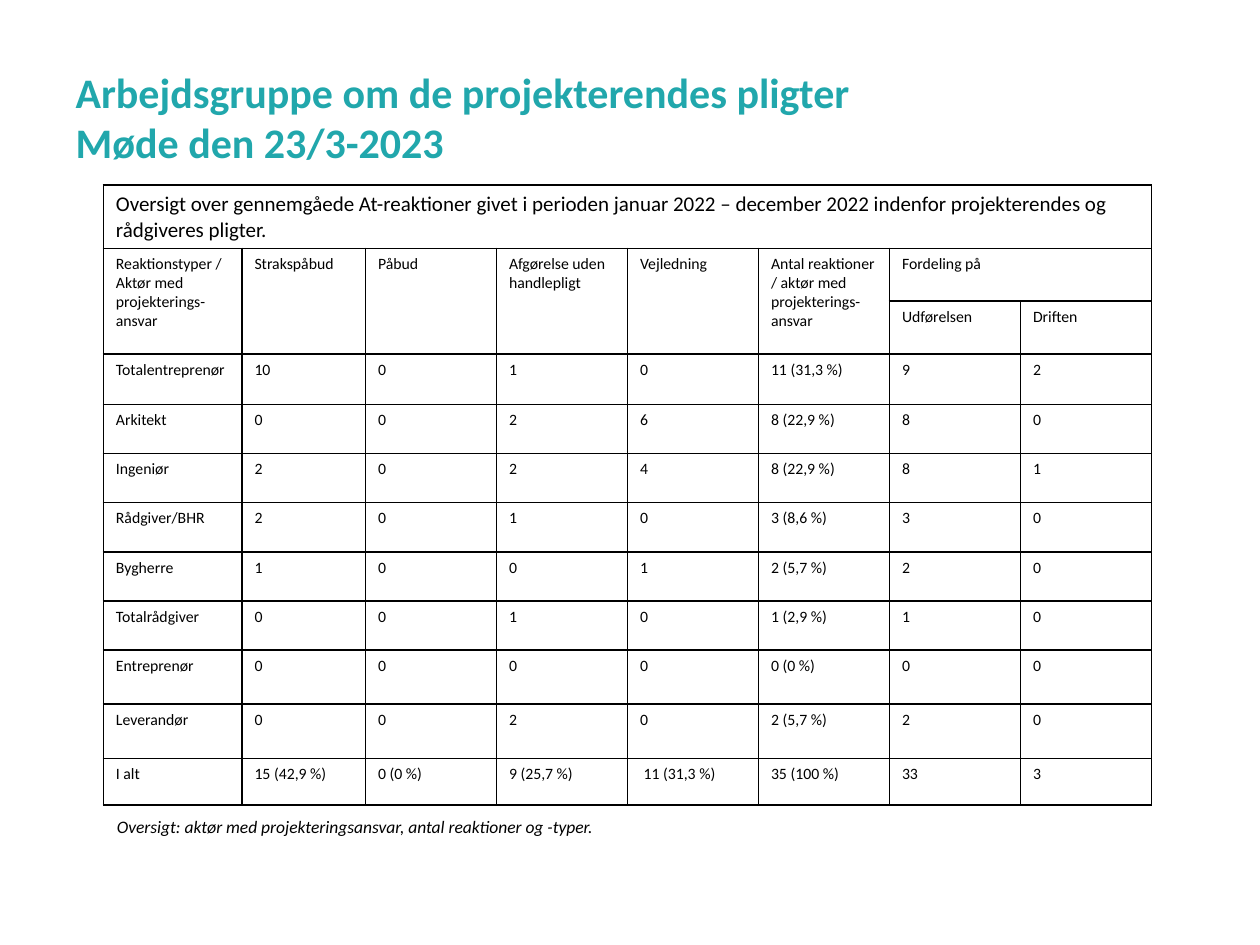
from lxml import etree
from pptx import Presentation
from pptx.dml.color import RGBColor
from pptx.enum.text import MSO_ANCHOR, MSO_AUTO_SIZE, PP_ALIGN
from pptx.oxml.ns import qn
from pptx.util import Inches, Pt

LEFT = PP_ALIGN.LEFT
TOP, MIDDLE = MSO_ANCHOR.TOP, MSO_ANCHOR.MIDDLE
GROW = MSO_AUTO_SIZE.SHAPE_TO_FIT_TEXT
FONT = "Calibri"
COLORS = {"title": "21A7AC", "text": "000000", "line": "000000"}
WIDTH, HEIGHT = 10, 7.5
TITLE_ONLY = 5

# Table content
HEADING = ("Oversigt over gennemgåede At-reaktioner givet i perioden januar 2022 – "
           "december 2022 indenfor projekterendes og rådgiveres pligter.")
HEADS = ["Reaktionstyper /\nAktør med projekterings-ansvar", "Strakspåbud", "Påbud",
         "Afgørelse uden handlepligt", "Vejledning",
         "Antal reaktioner / aktør med projekterings-ansvar", "Fordeling på"]
SPLIT = ["Udførelsen", "Driften"]
ACTORS = [
    ["Totalentreprenør", "10", "0", "1", "0", "11 (31,3 %)", "9", "2"],
    ["Arkitekt", "0", "0", "2", "6", "8 (22,9 %)", "8", "0"],
    ["Ingeniør", "2", "0", "2", "4", "8 (22,9 %)", "8", "1"],
    ["Rådgiver/BHR", "2", "0", "1", "0", "3 (8,6 %)", "3", "0"],
    ["Bygherre", "1", "0", "0", "1", "2 (5,7 %)", "2", "0"],
    ["Totalrådgiver", "0", "0", "1", "0", "1 (2,9 %)", "1", "0"],
    ["Entreprenør", "0", "0", "0", "0", "0 (0 %)", "0", "0"],
    ["Leverandør", "0", "0", "2", "0", "2 (5,7 %)", "2", "0"],
    ["I alt", "15 (42,9 %)", "0 (0 %)", "9 (25,7 %)", " 11 (31,3 %)",
     "35 (100 %)", "33", "3"],
]
COLS = [1.1, 0.98] + [1.04] * 6
ROWS = [0.5] + [0.42] * 2 + [0.4] + [0.39] * 5 + [0.43] * 2 + [0.37]
# Merged areas: first row, first column, last row, last column
MERGES = [(0, 0, 0, 7), (1, 6, 1, 7)] + [(1, c, 2, c) for c in range(6)]


class Page:
    """Style and current slide; places are shares of the slide's size."""

    def __init__(self, deck):
        self.slide = deck.slides.add_slide(deck.slide_layouts[TITLE_ONLY])

    def box(self, x, y, w, h):
        return (Inches(x * WIDTH), Inches(y * HEIGHT),
                Inches(w * WIDTH), Inches(h * HEIGHT))

    def run(self, para, text, size, color="text", bold=False, italic=False):
        run = para.add_run()
        run.text = text
        font = run.font
        font.name, font.size, font.bold, font.italic = FONT, Pt(size), bold, italic
        font.color.rgb = RGBColor.from_string(COLORS[color])

    def title(self, lines, *place):
        shape = self.slide.shapes.title
        shape.left, shape.top, shape.width, shape.height = self.box(*place)
        frame = shape.text_frame
        frame.vertical_anchor = MIDDLE
        para = frame.paragraphs[0]
        para.alignment = LEFT
        for i, line in enumerate(lines):
            if i:
                para.add_line_break()
            self.run(para, line, 24, "title", bold=True)

    def note(self, text, *place):
        frame = self.slide.shapes.add_textbox(*self.box(*place)).text_frame
        frame.word_wrap = True
        frame.auto_size = GROW
        para = frame.paragraphs[0]
        para.line_spacing = 1.07
        para.space_after = Pt(8)
        self.run(para, text, 10, italic=True)

    def border(self, cell):
        props = cell._tc.get_or_add_tcPr()
        for i, side in enumerate(("a:lnL", "a:lnR", "a:lnT", "a:lnB")):
            line = etree.Element(qn(side), w=str(Pt(1)))
            fill = etree.SubElement(line, qn("a:solidFill"))
            etree.SubElement(fill, qn("a:srgbClr"), val=COLORS["line"])
            props.insert(i, line)

    def cell(self, cell, text, size):
        cell.fill.background()
        cell.vertical_anchor = TOP
        self.border(cell)
        frame = cell.text_frame
        for i, line in enumerate(text.split("\n") if text else []):
            para = frame.add_paragraph() if i else frame.paragraphs[0]
            self.run(para, line, size)

    def table(self, rows, *place):
        table = self.slide.shapes.add_table(
            len(ROWS), len(COLS), *self.box(*place)).table
        table.first_row = table.horz_banding = False
        for col, width in zip(table.columns, COLS):
            col.width = Inches(width)
        for row, height in zip(table.rows, ROWS):
            row.height = Inches(height)
        for top, left, low, right in MERGES:
            table.cell(top, left).merge(table.cell(low, right))
        for r, row in enumerate(rows):
            for c, text in enumerate(row):
                self.cell(table.cell(r, c), text, 9 if r else 12)


def main():
    deck = Presentation()
    deck.slide_width, deck.slide_height = Inches(WIDTH), Inches(HEIGHT)
    page = Page(deck)

    # Title
    page.title(["Arbejdsgruppe om de projekterendes pligter ",
                "Møde den 23/3-2023"], 0.05, 0.04, 0.9, 1 / 6)

    # Caption below the table
    page.note("Oversigt: aktør med projekteringsansvar, antal reaktioner og -typer.",
              0.083, 0.855, 0.859, 0.076)

    # Reactions by actor
    rows = [[HEADING] + [""] * 7, HEADS + [""], [""] * 6 + SPLIT] + ACTORS
    page.table(rows, 0.082, 0.196, sum(COLS) / WIDTH, sum(ROWS) / HEIGHT)

    deck.save("out.pptx")


if __name__ == "__main__":
    main()
